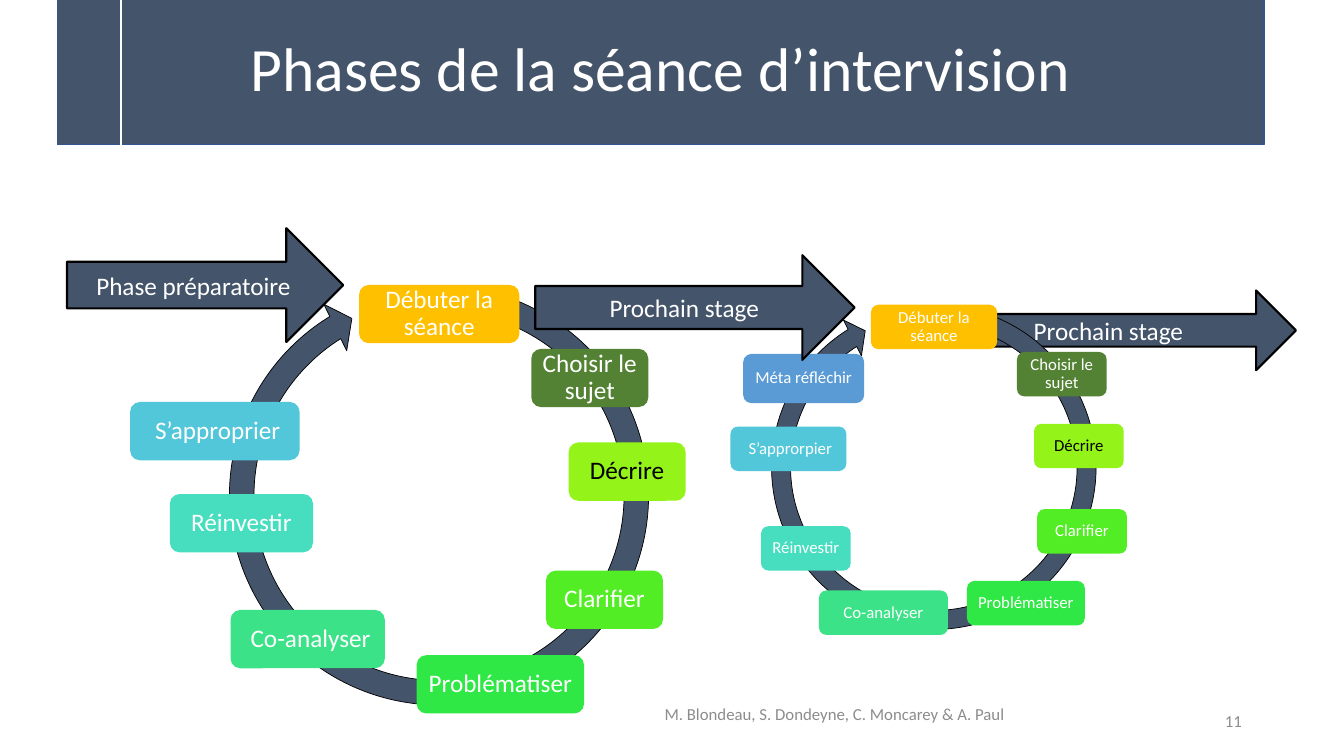
import pptx
import pptx.dml.color
import pptx.enum.shapes
import pptx.enum.text
import pptx.oxml
import pptx.util
from pptx.util import Cm

RGBColor = pptx.dml.color.RGBColor
SHAPES = pptx.enum.shapes.MSO_SHAPE
ALIGN = pptx.enum.text.PP_ALIGN

SLATE = RGBColor(0x44, 0x54, 0x6A)
NAVY = RGBColor(0x32, 0x54, 0x91)
BLACK = RGBColor(0, 0, 0)
WHITE = RGBColor(0xFF, 0xFF, 0xFF)
GREY = RGBColor(0x8C, 0x8C, 0x8C)
GOLD = RGBColor(0xFF, 0xC0, 0x00)
FOREST = RGBColor(0x54, 0x82, 0x35)
LIME = RGBColor(0x94, 0xF3, 0x19)
LEAF = RGBColor(0x52, 0xED, 0x24)
GREEN = RGBColor(0x30, 0xE8, 0x45)
MINT = RGBColor(0x3B, 0xE2, 0x87)
TURQUOISE = RGBColor(0x46, 0xDE, 0xBF)
CYAN = RGBColor(0x51, 0xC7, 0xD9)
BLUE = RGBColor(0x5B, 0x9B, 0xD5)


def write(shape, text, size=18, color=WHITE, align=ALIGN.CENTER, spacing=1.0, inset=None):
    frame = shape.text_frame
    frame.word_wrap = True
    frame.vertical_anchor = pptx.enum.text.MSO_ANCHOR.MIDDLE
    if inset is not None:
        frame.margin_left = frame.margin_right = Cm(inset)
        frame.margin_top = frame.margin_bottom = Cm(inset)
    para = frame.paragraphs[0]
    para.alignment = align
    para.line_spacing = spacing
    span = para.add_run()
    span.text = text
    span.font.name = "Calibri"
    span.font.size = pptx.util.Pt(size)
    span.font.color.rgb = color


def add_filled(kind, left, top, width, height, fill, line=None, weight=1):
    """Add a preset shape, measured in centimetres, without shadow."""
    shape = page.shapes.add_shape(kind, Cm(left), Cm(top), Cm(width), Cm(height))
    shape.shadow.inherit = False
    shape.fill.solid()
    shape.fill.fore_color.rgb = fill
    if line is None:
        shape.line.fill.background()
    else:
        shape.line.color.rgb = line
        shape.line.width = pptx.util.Pt(weight)
    return shape


deck = pptx.Presentation()
deck.slide_width = Cm(33.87)
deck.slide_height = Cm(19.05)
page = deck.slides.add_slide(deck.slide_layouts[6])

# Cycles: the ring comes first, then its steps as (text, left, top, width, height, fill)
small_cycle = {
    "ring": (19.18, 7.42, 8.71), "angles": (142.68, 170.93), "size": 12, "inset": 0.12,
    "steps": [
        ("Débuter la séance", 21.95, 7.68, 3.18, 1.12, GOLD),
        ("Choisir le sujet", 25.63, 8.87, 2.26, 1.12, FOREST),
        ("Décrire", 26.06, 10.68, 2.26, 1.12, LIME),
        ("Clarifier", 26.14, 12.83, 2.26, 1.12, LEAF),
        ("Problématiser", 24.37, 14.64, 2.97, 1.12, GREEN),
        ("Co-analyser", 20.64, 14.88, 3.25, 1.12, MINT),
        ("Réinvestir", 19.18, 13.26, 2.26, 1.12, TURQUOISE),
        (" S’approrpier", 18.41, 10.75, 2.92, 1.12, CYAN),
        ("Méta réfléchir", 18.73, 8.92, 3.05, 1.24, BLUE),
    ],
}
large_cycle = {
    "ring": (5.44, 6.86, 11.25), "angles": (142.97, 170.76), "size": 18, "inset": 0.15,
    "steps": [
        ("Débuter la séance", 9.05, 7.18, 4.04, 1.47, GOLD),
        ("Choisir le sujet", 13.39, 8.79, 2.95, 1.47, FOREST),
        ("Décrire", 14.33, 11.15, 2.95, 1.47, LIME),
        ("Clarifier", 13.76, 14.38, 2.95, 1.47, LEAF),
        ("Problématiser", 10.5, 16.51, 4.22, 1.47, GREEN),
        (" Co-analyser", 5.81, 15.37, 3.89, 1.47, MINT),
        ("Réinvestir", 4.28, 12.45, 3.61, 1.47, TURQUOISE),
        (" S’approprier", 3.28, 10.13, 4.27, 1.47, CYAN),
    ],
}

# The last stage arrow lies above both cycles, the others below
stage_arrows = [
    ("Phase préparatoire", 1.69, 5.75, 6.96, 2.87),
    ("Prochain stage", 23.62, 7.32, 9.04, 2.01),
    small_cycle,
    large_cycle,
    ("Prochain stage", 13.49, 6.43, 8.05, 2.64),
]
for item in stage_arrows:
    if isinstance(item, tuple):
        text, *place = item
        arrow = add_filled(SHAPES.RIGHT_ARROW, *place, SLATE, BLACK, 1.5)
        arrow.adjustments[0] = 0.41
        arrow.adjustments[1] = 0.5
        write(arrow, text)
        continue
    left, top, diameter = item["ring"]
    ring = add_filled(SHAPES.CIRCULAR_ARROW, left, top, diameter, diameter, SLATE, BLACK, 0.5)
    for index, value in enumerate((0.055, 3.31, *item["angles"], 0.058)):
        ring.adjustments[index] = value
    for text, *place, fill in item["steps"]:
        box = add_filled(SHAPES.ROUNDED_RECTANGLE, *place, fill)
        write(box, text, size=item["size"], color=BLACK if fill == LIME else WHITE,
              spacing=0.9, inset=item["inset"])

# Title band with its vertical rule
band = add_filled(SHAPES.RECTANGLE, 1.45, -0.03, 30.41, 3.68, SLATE, NAVY)
write(band, "Phases de la séance d’intervision", size=44, spacing=0.9)
rule = page.shapes.add_connector(
    pptx.enum.shapes.MSO_CONNECTOR.STRAIGHT, Cm(3.05), Cm(0), Cm(3.05), Cm(3.68))
rule.line.color.rgb = WHITE
rule.line.width = pptx.util.Pt(1)
rule._element.spPr.append(pptx.oxml.parse_xml(
    '<a:effectLst xmlns:a="http://schemas.openxmlformats.org/drawingml/2006/main"/>'))

# Footer
for text, left, top, width, align in (
    ("M. Blondeau, S. Dondeyne, C. Moncarey & A. Paul", 15.32, 17.48, 11.43, ALIGN.CENTER),
    ("11", 23.93, 17.65, 7.62, ALIGN.RIGHT),
):
    box = page.shapes.add_textbox(Cm(left), Cm(top), Cm(width), Cm(1.02))
    write(box, text, size=12, color=GREY, align=align)

deck.save("out.pptx")
